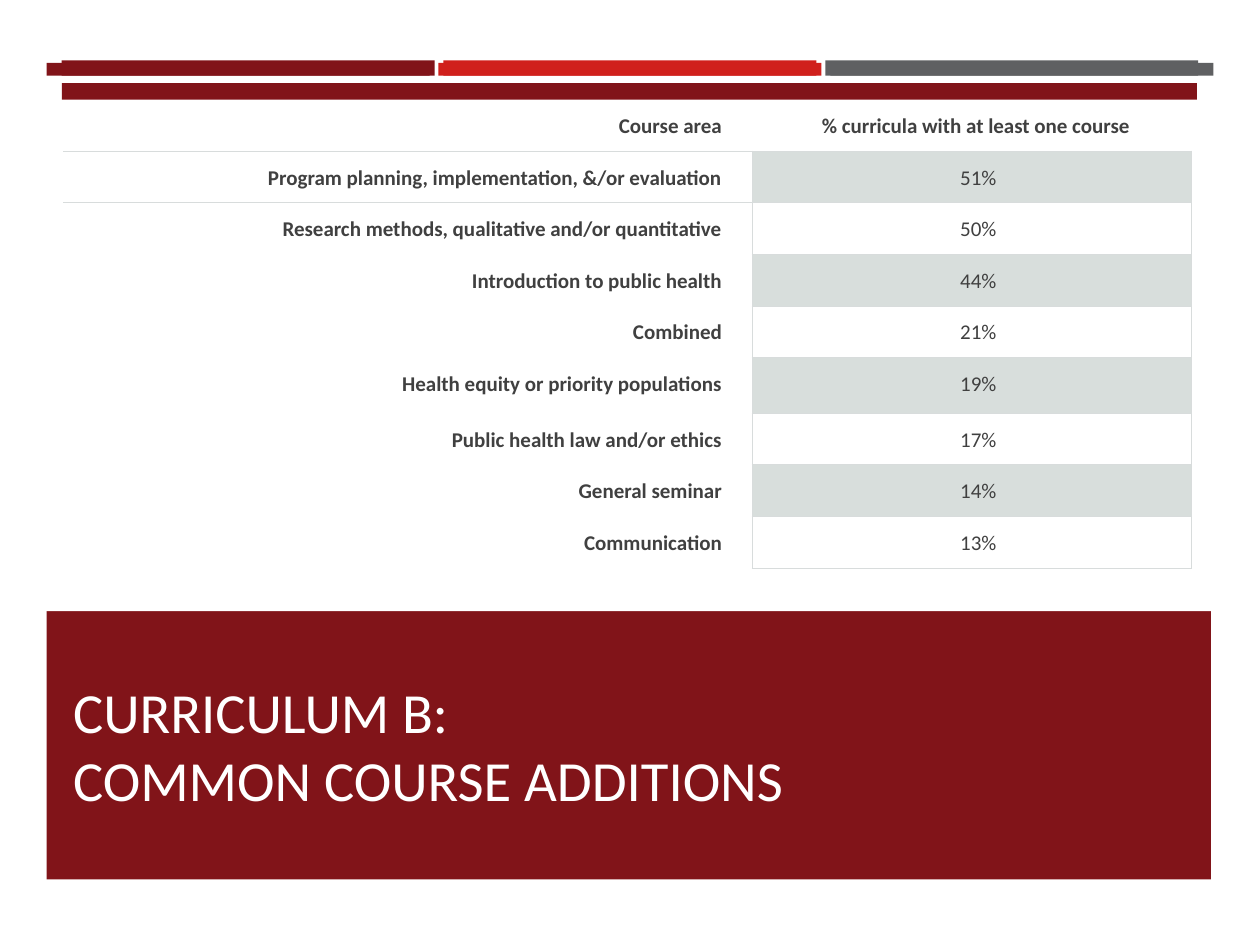
import pptx
import pptx.util
from dataclasses import dataclass
from pptx.dml.color import RGBColor
from pptx.enum.shapes import MSO_SHAPE
from pptx.enum.text import MSO_ANCHOR, MSO_AUTO_SIZE, PP_ALIGN
from pptx.oxml.ns import qn
from lxml import etree

Inches, Pt = pptx.util.Inches, pptx.util.Pt


@dataclass(frozen=True)
class Theme:
    font: str = "Calibri"
    title_size: float = 32.4
    table_size: float = 12
    maroon: str = "811419"
    red: str = "D0201C"
    gray: str = "5F6062"
    white: str = "FFFFFF"
    text: str = "404040"
    rule: str = "D8DCDC"
    stripe: str = "D8DEDC"
    stripe_alpha: int = 20
    rule_width: float = 0.75
    plain_table: str = "{2D5ABB26-0587-4C30-8999-92F81FD0307C}"


class SlideBuilder:
    def __init__(self, prs, theme):
        self.theme = theme
        self.s = prs.slides.add_slide(prs.slide_layouts[5])

    def style(self, p, size, color, align, bold=False):
        p.alignment = align
        p.font.name = self.theme.font
        p.font.size = Pt(size)
        p.font.bold = bold
        p.font.color.rgb = RGBColor.from_string(color)

    def rect(self, left, top, width, height, color):
        sp = self.s.shapes.add_shape(MSO_SHAPE.RECTANGLE, Inches(left), Inches(top),
                                     Inches(width), Inches(height))
        sp.shadow.inherit = False
        sp.fill.solid()
        sp.fill.fore_color.rgb = RGBColor.from_string(color)
        sp.line.fill.background()
        return sp

    def title(self, text, left, top, width, height, band):
        """Fill the title placeholder and stack it just above its band."""
        sp = self.s.shapes.title
        sp.left, sp.top = Inches(left), Inches(top)
        sp.width, sp.height = Inches(width), Inches(height)
        tf = sp.text_frame
        tf.text = text
        tf.word_wrap = True
        tf.auto_size = MSO_AUTO_SIZE.NONE
        tf.vertical_anchor = MSO_ANCHOR.BOTTOM
        self.style(tf.paragraphs[0], self.theme.title_size, self.theme.white, PP_ALIGN.LEFT)
        band.element.addnext(sp.element)

    def borders(self, cell, sides):
        """Rule the given sides, a string of letters from LRTB in that order."""
        tc_pr = cell._tc.get_or_add_tcPr()
        for side in sides:
            ln = etree.SubElement(tc_pr, qn(f"a:ln{side}"), w=str(Pt(self.theme.rule_width)))
            fill = etree.SubElement(ln, qn("a:solidFill"))
            etree.SubElement(fill, qn("a:srgbClr"), val=self.theme.rule)

    def cell_fill(self, cell, striped):
        if not striped:
            cell.fill.background()
            return
        cell.fill.solid()
        cell.fill.fore_color.rgb = RGBColor.from_string(self.theme.stripe)
        color = cell._tc.tcPr.find(".//" + qn("a:srgbClr"))
        etree.SubElement(color, qn("a:alpha"), val=str(self.theme.stripe_alpha * 1000))

    def table(self, rows, left, top, widths, heights):
        gf = self.s.shapes.add_table(len(rows), len(widths), Inches(left), Inches(top),
                                     Inches(sum(widths)), Inches(sum(heights)))
        gf.element.find(".//" + qn("a:tableStyleId")).text = self.theme.plain_table
        table = gf.table
        table.horz_banding = False
        for column, width in zip(table.columns, widths):
            column.width = Inches(width)
        for i, (row, height) in enumerate(zip(rows, heights)):
            table.rows[i].height = Inches(height)
            for j, text in enumerate(row):
                cell = table.cell(i, j)
                header, value = i == 0, j == 1
                cell.text = text
                cell.margin_left = Inches(0.16)
                cell.margin_right = Inches(0.06 if value else 0.24)
                cell.margin_top = cell.margin_bottom = Inches(0.08)
                p = cell.text_frame.paragraphs[0]
                p.line_spacing = 1.15
                self.style(p, self.theme.table_size, self.theme.text,
                           PP_ALIGN.CENTER if value else PP_ALIGN.RIGHT,
                           bold=header or not value)
                if header:
                    self.borders(cell, "B")
                elif value:
                    self.borders(cell, "LRTB")
                elif i == 1:
                    self.borders(cell, "RT")
                else:
                    self.borders(cell, "R")
                self.cell_fill(cell, striped=value and i % 2 == 1)


COURSES = [
    ("Course area", "% curricula with at least one course "),
    ("Program planning, implementation, &/or evaluation", "51%"),
    ("Research methods, qualitative and/or quantitative", "50%"),
    ("Introduction to public health", "44%"),
    ("Combined", "21%"),
    ("Health equity or priority populations", "19%"),
    ("Public health law and/or ethics", "17%"),
    ("General seminar", "14%"),
    ("Communication", "13%"),
]


def main():
    prs = pptx.Presentation()
    prs.slide_width, prs.slide_height = Inches(10), Inches(7.5)
    theme = Theme()
    b = SlideBuilder(prs, theme)

    bar_colors = (theme.maroon, theme.red, theme.gray)
    for left, top, width, height, pitch in ((0.49, 0.48, 2.96, 0.12, 3.03),
                                            (0.37, 0.5, 3.04, 0.1, 3.11)):
        for i, color in enumerate(bar_colors):
            b.rect(left + i * pitch, top, width, height, color)
    b.rect(0.49, 0.66, 9.01, 1.38, theme.maroon)

    band = b.rect(0.37, 4.85, 9.24, 2.13, theme.maroon)
    band.top, band.height = Inches(3.37), Inches(3.61)
    b.title("CURRICULUM B: \vCOMMON COURSE ADDITIONS", 0.48, 5.33, 9.02, 1.17, band)

    b.rect(0, 0.79, 10, 4.06, theme.white)
    heights = [0.44 if area.startswith("Health equity") else 0.41 for area, _ in COURSES]
    b.table(COURSES, 0.5, 0.79, (5.47, 3.49), heights)

    prs.save("out.pptx")


if __name__ == "__main__":
    main()
